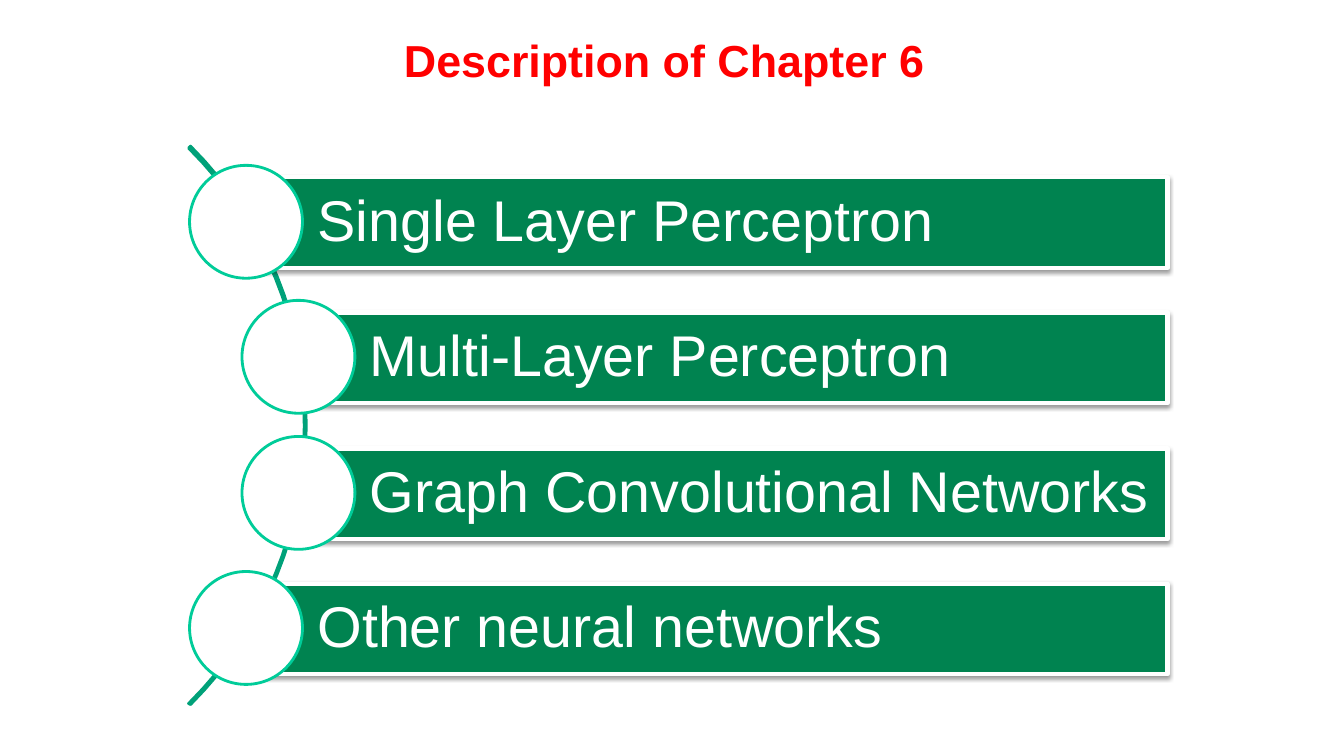
import pptx
import pptx.dml.color
import pptx.enum.shapes
import pptx.enum.text
import pptx.oxml
import pptx.oxml.ns
import pptx.util

RED = pptx.dml.color.RGBColor(0xFF, 0x00, 0x00)
WHITE = pptx.dml.color.RGBColor(0xFF, 0xFF, 0xFF)
GREEN = pptx.dml.color.RGBColor(0x00, 0x83, 0x50)
TEAL = pptx.dml.color.RGBColor(0x00, 0xA1, 0x79)
MINT = pptx.dml.color.RGBColor(0x00, 0xCC, 0x99)
SCALE = 9144
PITCH = 134.4
TOPICS = [
    ("Single Layer Perceptron", 244),
    ("Multi-Layer Perceptron", 296),
    ("Graph Convolutional Networks", 296),
    ("Other neural networks", 244),
]
SHADOW = (
    '<a:outerShdw %s blurRad="38100" dist="20320" dir="5400000" rotWithShape="0">'
    '<a:srgbClr val="000000"><a:alpha val="38000"/></a:srgbClr></a:outerShdw>'
    % pptx.oxml.ns.nsdecls("a")
)


def px(num):
    return pptx.util.Emu(round(num * SCALE))


def put(item, vals):
    for key, val in vals.items():
        setattr(item, key, val)


def curve(ends, steps=32):
    a, b, c, d = ends
    for step in range(steps + 1):
        t = step / steps
        u = 1 - t
        yield tuple(
            px(u**3 * a[k] + 3 * u * u * t * b[k] + 3 * u * t * t * c[k] + t**3 * d[k])
            for k in (0, 1)
        )


class Deck:
    font = "Arial"
    align = pptx.enum.text.PP_ALIGN
    kinds = pptx.enum.shapes.MSO_SHAPE

    def __init__(self):
        self.file = pptx.Presentation()
        put(self.file, {"slide_width": px(1333), "slide_height": px(750)})
        self.slide = self.file.slides.add_slide(self.file.slide_layouts[5])

    def place(self, item, left, top, width, height):
        put(item, {"left": px(left), "top": px(top),
                   "width": px(width), "height": px(height)})

    def label(self, item, text, size, color, align, pads, bold=False, space=1.0):
        frame = item.text_frame
        frame.text = text
        put(frame, {
            "word_wrap": True,
            "auto_size": pptx.enum.text.MSO_AUTO_SIZE.NONE,
            "vertical_anchor": pptx.enum.text.MSO_ANCHOR.MIDDLE,
            "margin_left": px(pads[0]), "margin_right": px(pads[1]),
            "margin_top": px(pads[1]), "margin_bottom": px(pads[1]),
        })
        para = frame.paragraphs[0]
        put(para, {"alignment": align, "line_spacing": space})
        put(para.font, {"name": self.font, "size": pptx.util.Pt(size), "bold": bold})
        para.font.color.rgb = color

    def paint(self, item, fill, line, width):
        item.shadow.inherit = False
        if fill is None:
            item.fill.background()
        else:
            item.fill.solid()
            item.fill.fore_color.rgb = fill
        item.line.color.rgb = line
        item.line.width = pptx.util.Pt(width)

    def title(self, text):
        item = self.slide.shapes.title
        self.place(item, 210, 13, 898, 92)
        self.label(item, text, 32, RED, self.align.CENTER, (5, 5), bold=True)

    def arc(self):
        outer = list(curve([(189, 145), (342, 298), (342, 546), (189, 699)]))
        inner = list(curve([(187, 698), (340, 546), (340, 299), (187, 147)]))
        form = self.slide.shapes.build_freeform(*outer[0])
        form.add_line_segments(outer[1:] + inner, close=True)
        self.paint(form.convert_to_shape(), None, TEAL, 2)

    def shape(self, kind, left, top, width, height, fill, line, thick):
        item = self.slide.shapes.add_shape(
            kind, px(left), px(top), px(width), px(height))
        self.paint(item, fill, line, thick)
        return item

    def bar(self, text, left, top):
        item = self.shape(self.kinds.RECTANGLE, left, top, 1158 - left, 90,
                          GREEN, WHITE, 3)
        glow = item._element.spPr.find(pptx.oxml.ns.qn("a:effectLst"))
        glow.append(pptx.oxml.parse_xml(SHADOW))
        self.label(item, text, 41, WHITE, self.align.LEFT, (71, 11), space=0.9)

    def disc(self, left, top):
        self.shape(self.kinds.OVAL, left, top, 112, 112, WHITE, MINT, 2)


def main():
    deck = Deck()
    deck.title("Description of Chapter 6")
    deck.arc()
    for row, (text, left) in enumerate(TOPICS):
        top = 176 + round(row * PITCH)
        deck.bar(text, left, top)
        deck.disc(left - 56, top - 12)
    deck.file.save("out.pptx")


if __name__ == "__main__":
    main()
